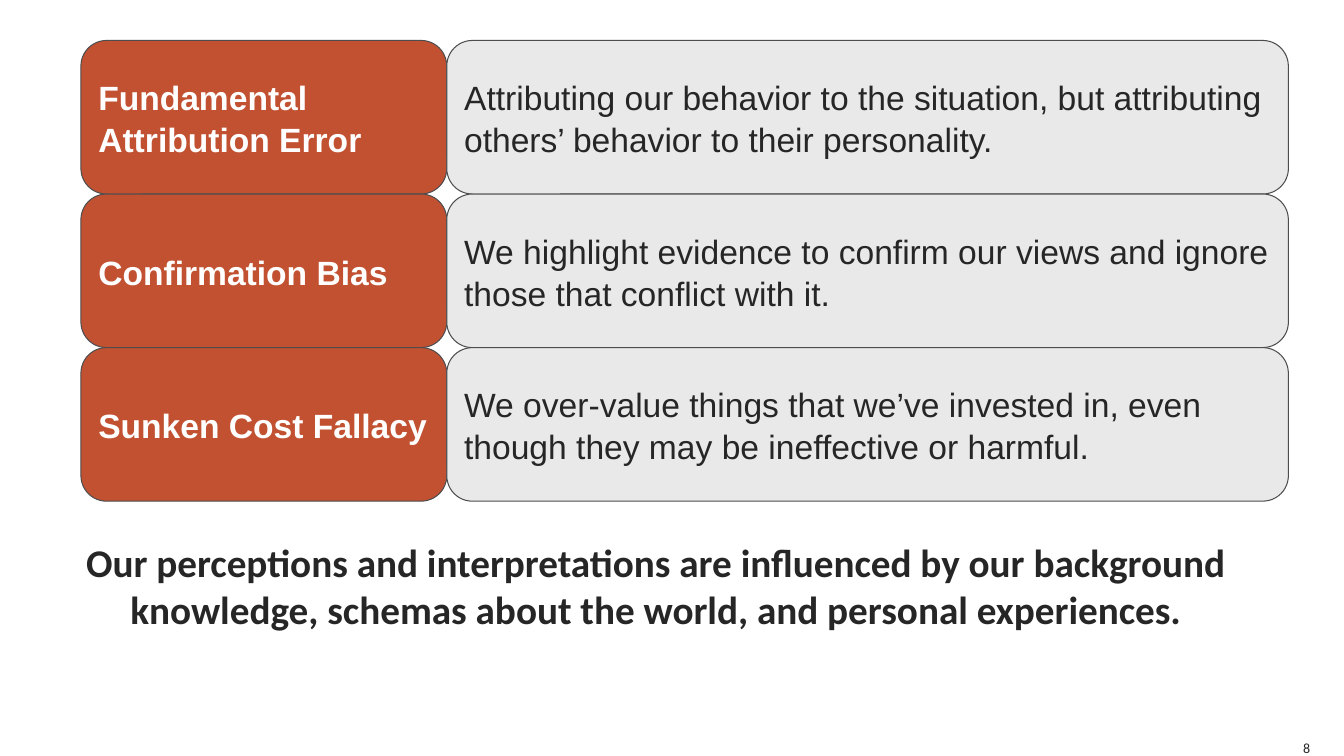
from pptx import Presentation
from pptx.dml.color import RGBColor
from pptx.enum.shapes import MSO_SHAPE
from pptx.enum.text import MSO_ANCHOR, PP_ALIGN
from pptx.util import Cm, Pt

BIASES = [
    ("Fundamental Attribution Error",
     "Attributing our behavior to the situation, but attributing "
     "others’ behavior to their personality."),
    ("Confirmation Bias",
     "We highlight evidence to confirm our views and ignore "
     "those that conflict with it."),
    ("Sunken Cost Fallacy",
     "We over-value things that we’ve invested in, even "
     "though they may be ineffective or harmful."),
]
LEFT, TOP = 2.04, 1.02
NAME_WIDTH, MEANING_WIDTH = 9.22, 21.21
ROW_HEIGHT = 3.87


def rgb(value):
    return RGBColor.from_string(value)


class BiasSlide:
    DARK, WHITE = "262626", "FFFFFF"
    RUST, GREY, OUTLINE = "C25131", "E9E9E9", "4D4D4F"

    def __init__(self, prs):
        self.slide = prs.slides.add_slide(prs.slide_layouts[5])

    def set_text(self, sp, text, size, font, color, bold=False,
                 align=PP_ALIGN.LEFT, anchor=MSO_ANCHOR.MIDDLE, spacing=1.0):
        tf = sp.text_frame
        tf.text = text
        tf.word_wrap = True
        tf.vertical_anchor = anchor
        p = tf.paragraphs[0]
        p.alignment = align
        p.line_spacing = spacing
        r = p.runs[0]
        r.font.size = Pt(size)
        r.font.name = font
        r.font.bold = bold
        r.font.color.rgb = rgb(color)
        return tf

    def clear_margins(self, tf):
        tf.margin_left = tf.margin_right = tf.margin_top = tf.margin_bottom = 0

    def title(self, text, left, top, width, height):
        sp = self.slide.shapes.title
        sp.left, sp.top, sp.width, sp.height = map(Cm, (left, top, width, height))
        tf = self.set_text(sp, text, 28, "Calibri", self.DARK, True, PP_ALIGN.CENTER)
        self.clear_margins(tf)

    def card(self, text, left, top, width, fill, color, bold=False):
        sp = self.slide.shapes.add_shape(
            MSO_SHAPE.ROUNDED_RECTANGLE,
            Cm(left), Cm(top), Cm(width), Cm(ROW_HEIGHT))
        sp.shadow.inherit = False
        sp.fill.solid()
        sp.fill.fore_color.rgb = rgb(fill)
        sp.line.color.rgb = rgb(self.OUTLINE)
        sp.line.width = Pt(0.75)
        self.set_text(sp, text, 24, "Arial", color, bold, spacing=1.05)

    def page_number(self, text, left, top, size):
        sp = self.slide.shapes.add_textbox(Cm(left), Cm(top), Cm(size), Cm(size))
        tf = self.set_text(sp, text, 10, "Calibri", self.DARK,
                           align=PP_ALIGN.RIGHT, anchor=MSO_ANCHOR.BOTTOM)
        tf.word_wrap = False
        self.clear_margins(tf)


def main():
    prs = Presentation()
    prs.slide_width, prs.slide_height = Cm(33.87), Cm(19.05)
    s = BiasSlide(prs)
    s.title("Our perceptions and interpretations are influenced by our background "
            "knowledge, schemas about the world, and personal experiences.",
            1.52, 12.65, 30, 4.19)
    for row, (name, meaning) in enumerate(BIASES):
        top = TOP + row * ROW_HEIGHT
        s.card(name, LEFT, top, NAME_WIDTH, s.RUST, s.WHITE, bold=True)
        s.card(meaning, LEFT + NAME_WIDTH, top, MEANING_WIDTH, s.GREY, s.DARK)
    s.page_number("8", 32.59, 18.62, 0.43)
    prs.save("out.pptx")


if __name__ == "__main__":
    main()
